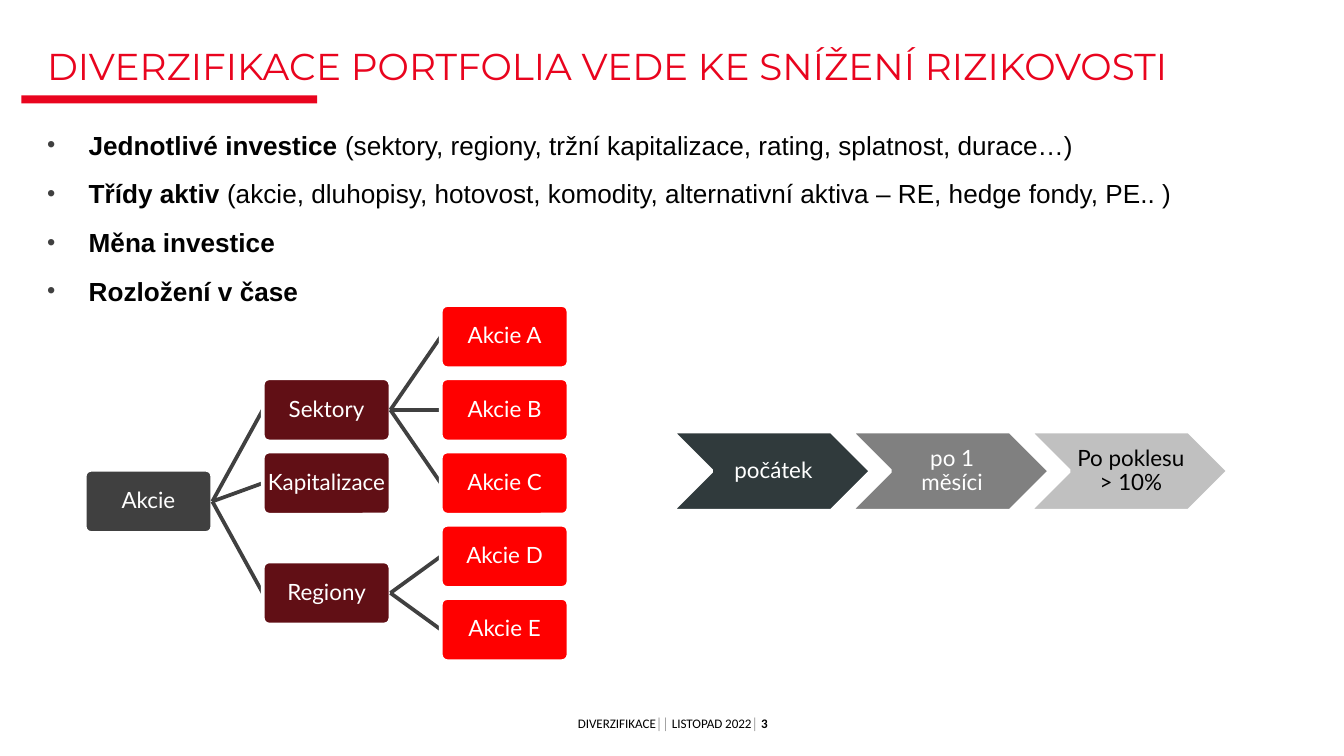
from lxml import etree
from pptx import Presentation
from pptx.dml.color import RGBColor
from pptx.enum.shapes import MSO_CONNECTOR, MSO_SHAPE
from pptx.enum.text import MSO_ANCHOR, MSO_AUTO_SIZE, PP_ALIGN
from pptx.oxml.ns import qn
from pptx.util import Inches, Pt

RECTANGLE, ROUNDED = MSO_SHAPE.RECTANGLE, MSO_SHAPE.ROUNDED_RECTANGLE
CHEVRON, STRAIGHT = MSO_SHAPE.CHEVRON, MSO_CONNECTOR.STRAIGHT
TOP, MIDDLE, BOTTOM = MSO_ANCHOR.TOP, MSO_ANCHOR.MIDDLE, MSO_ANCHOR.BOTTOM
LEFT, CENTER, JUSTIFY = PP_ALIGN.LEFT, PP_ALIGN.CENTER, PP_ALIGN.JUSTIFY

COLORS = {
    "accent": "E9041E", "text": "010101", "white": "FFFFFF", "dark": "404040",
    "maroon": "610F15", "red": "FF0000", "slate": "303A3C",
    "gray": "808080", "silver": "C0C0C0",
}

# Content
TITLE = "DIVERZIFIKACE PORTFOLIA VEDE KE SNÍŽENÍ RIZIKOVOSTI"
BULLETS = [  # bold part, regular part
    ("Jednotlivé investice ",
     "(sektory, regiony, tržní kapitalizace, rating, splatnost, durace…)"),
    ("Třídy aktiv ",
     "(akcie, dluhopisy, hotovost, komodity, alternativní aktiva – RE, hedge fondy, PE.. )"),
    ("Měna investice", ""),
    ("Rozložení v čase", ""),
]
TREE = ("Akcie", 2.25, [  # label, row, children
    ("Sektory", 1, [("Akcie A", 0, []), ("Akcie B", 1, []), ("Akcie C", 2, [])]),
    ("Kapitalizace", 2, []),
    ("Regiony", 3.5, [("Akcie D", 3, []), ("Akcie E", 4, [])]),
])
STEPS = [("počátek", "slate", "white"), ("po 1 měsíci", "gray", "white"),
         ("Po poklesu > 10%", "silver", "text")]
FOOTER = [("DIVERZIFIKACE", "text", False), ("││ ", "gray", False),
          ("LISTOPAD 2022", "text", False), ("│ ", "gray", False),
          ("3", "text", True)]

# Layout rules, in inches
TREE_LEFT, TREE_TOP = 0.63, 2.27
COLUMN_PITCH = 2.65 / 2  # three columns
ROW_PITCH = 2.18 / 4  # five rows
BOX_WIDTH, BOX_HEIGHT = 0.95, 0.47
LEVEL_COLORS = ["dark", "maroon", "red"]
STEP_LEFT, STEP_TOP, STEP_PITCH = 5, 3.21, 1.33
STEP_WIDTH, STEP_HEIGHT = 1.48, 0.59


def rgb(name):
    return RGBColor.from_string(COLORS[name])


def set_font(font, name, size, color):
    font.name, font.size = name, Pt(size)
    font.color.rgb = rgb(color)


def set_frame(frame, anchor, margins=(0, 0, 0, 0), wrap=True):
    frame.auto_size = MSO_AUTO_SIZE.NONE
    frame.word_wrap, frame.vertical_anchor = wrap, anchor
    (frame.margin_left, frame.margin_top,
     frame.margin_right, frame.margin_bottom) = map(Inches, margins)


def place(shape, *box):
    shape.left, shape.top, shape.width, shape.height = map(Inches, box)


def add_filled(slide, kind, box, fill):
    shape = slide.shapes.add_shape(kind, *map(Inches, box))
    shape.shadow.inherit = False
    shape.fill.solid()
    shape.fill.fore_color.rgb = rgb(fill)
    shape.line.fill.background()
    return shape


def add_labelled(slide, kind, box, fill, label, color, margins):
    shape = add_filled(slide, kind, box, fill)
    shape.line.color.rgb = rgb("white")
    shape.line.width = Pt(2)
    set_frame(shape.text_frame, MIDDLE, margins)
    paragraph = shape.text_frame.paragraphs[0]
    paragraph.text = label
    paragraph.alignment, paragraph.line_spacing = CENTER, 0.9
    set_font(paragraph.font, "Lato", 12, color)
    return shape


def add_branch(slide, *points):
    branch = slide.shapes.add_connector(STRAIGHT, *map(Inches, points))
    branch.line.color.rgb = rgb("dark")
    branch.line.width = Pt(2)
    etree.SubElement(branch._element.spPr, qn("a:effectLst"))


def add_node(slide, node, level=0):
    label, row, children = node
    left = TREE_LEFT + level * COLUMN_PITCH
    top = TREE_TOP + row * ROW_PITCH
    box = add_labelled(slide, ROUNDED, (left, top, BOX_WIDTH, BOX_HEIGHT),
                       LEVEL_COLORS[level], label, "white", [0.01] * 4)
    box.adjustments[0] = 0.1
    middle = top + BOX_HEIGHT / 2
    for child in children:
        child_middle = middle + (child[1] - row) * ROW_PITCH
        add_branch(slide, left + BOX_WIDTH, middle, left + COLUMN_PITCH, child_middle)
        add_node(slide, child, level + 1)


def add_bullet(paragraph):
    properties = paragraph._p.get_or_add_pPr()
    properties.set("marL", str(Inches(0.31)))
    properties.set("indent", str(Inches(-0.31)))
    color = etree.SubElement(properties, qn("a:buClr"))
    etree.SubElement(color, qn("a:srgbClr"), val=COLORS["dark"])
    etree.SubElement(properties, qn("a:buSzPct"), val="90000")
    etree.SubElement(properties, qn("a:buFont"), typeface="Arial")
    etree.SubElement(properties, qn("a:buChar"), char="•")


# Widescreen slide, 16:9
presentation = Presentation()
presentation.slide_width = Inches(10)
presentation.slide_height = Inches(10 * 9 / 16)
slide = presentation.slides.add_slide(presentation.slide_layouts[1])

# Title with its accent bar
add_filled(slide, RECTANGLE, (0.16, 0.71, 2.2, 0.06), "accent")
title = slide.shapes.title
place(title, 0.35, 0.39, 9.29, 0.26)
set_frame(title.text_frame, BOTTOM)
paragraph = title.text_frame.paragraphs[0]
paragraph.text = TITLE
paragraph.alignment, paragraph.line_spacing = LEFT, 0.75
set_font(paragraph.font, "Montserrat", 20, "accent")

# Bullet list
body = slide.placeholders[1]
place(body, 0.35, 1, 9.29, 1.74)
frame = body.text_frame
set_frame(frame, TOP)
for index, (bold_part, regular_part) in enumerate(BULLETS):
    paragraph = frame.add_paragraph() if index else frame.paragraphs[0]
    add_bullet(paragraph)
    paragraph.alignment, paragraph.line_spacing = JUSTIFY, Pt(14)
    paragraph.space_before, paragraph.space_after = Pt(3 if index else 0), Pt(9)
    set_font(paragraph.font, "Arial", 14, "text")
    for text, bold in ((bold_part, True), (regular_part, False)):
        if text:
            run = paragraph.add_run()
            run.text, run.font.bold = text, bold

# Stock tree
add_node(slide, TREE)

# Time steps
for index, (label, fill, color) in enumerate(STEPS):
    box = (STEP_LEFT + index * STEP_PITCH, STEP_TOP, STEP_WIDTH, STEP_HEIGHT)
    add_labelled(slide, CHEVRON, box, fill, label, color, (0.05, 0.02, 0.02, 0.02))

# Footer
footer = slide.shapes.add_textbox(*map(Inches, (4.25, 5.32, 1.51, 0.12)))
set_frame(footer.text_frame, MIDDLE, wrap=False)
paragraph = footer.text_frame.paragraphs[0]
paragraph.alignment = CENTER
for text, color, bold in FOOTER:
    run = paragraph.add_run()
    run.text, run.font.bold = text, bold
    set_font(run.font, "Calibri", 7, color)

presentation.save("out.pptx")
